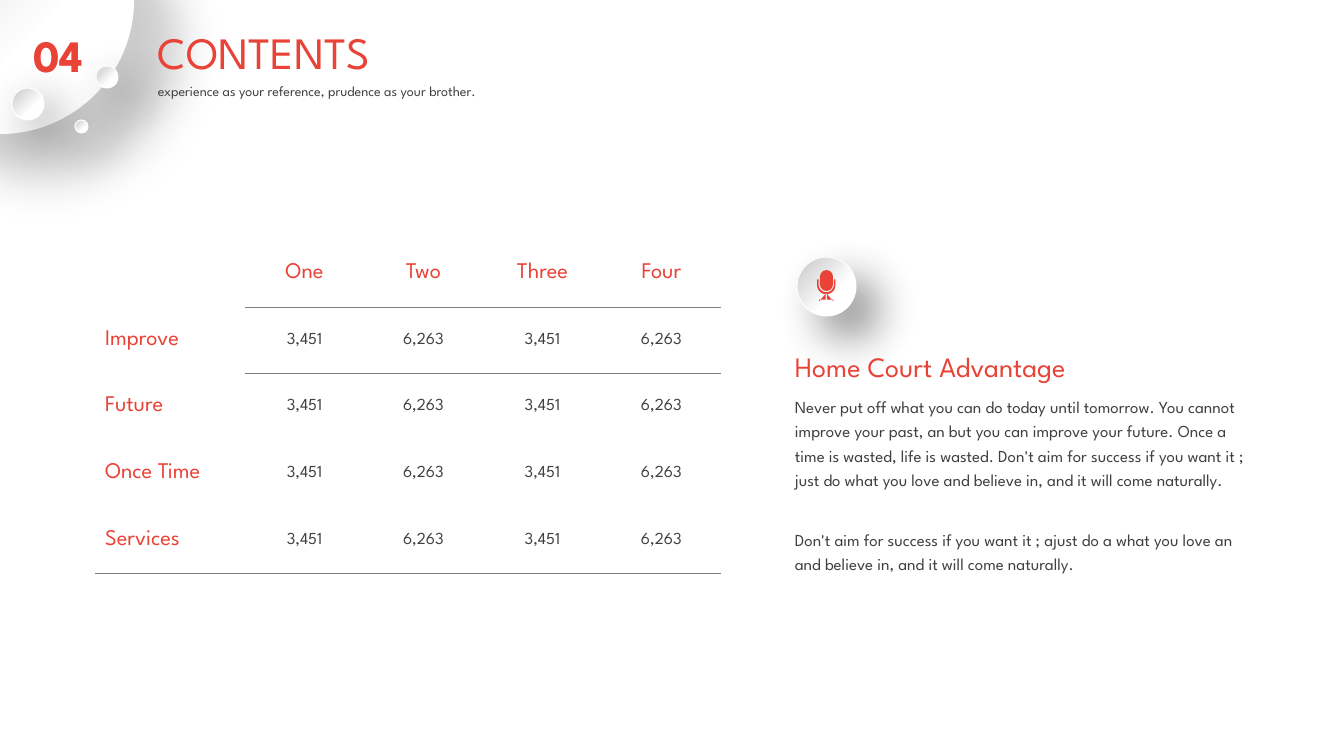
import math
from copy import deepcopy

from lxml import etree
from pptx import Presentation
from pptx.dml.color import RGBColor
from pptx.enum.shapes import MSO_SHAPE
from pptx.enum.text import MSO_ANCHOR, MSO_AUTO_SIZE, PP_ALIGN
from pptx.oxml.ns import qn
from pptx.util import Pt

PX = 9144000 / 1008  # EMU in one px
LEFT, CENTER = PP_ALIGN.LEFT, PP_ALIGN.CENTER
MIDDLE = MSO_ANCHOR.MIDDLE
GROW = MSO_AUTO_SIZE.SHAPE_TO_FIT_TEXT
ELLIPSE, ROUNDED = MSO_SHAPE.OVAL, MSO_SHAPE.ROUNDED_RECTANGLE
NO_STYLE = "{2D5ABB26-0587-4C30-8999-92F81FD0307C}"
RED, DARK, GRAY, WHITE, SILVER, BLACK = (
    "E94236", "404040", "808080", "FFFFFF", "C7C7C7", "000000")


def emu(*lengths):
    return [round(n * PX) for n in lengths]


def rgb(color):
    return RGBColor.from_string(color)


def child(parent, tag, **attrs):
    return etree.SubElement(parent, qn(tag), {k: str(v) for k, v in attrs.items()})


def write(tf, text, size=12, color=DARK, bold=False, align=LEFT, spacing=None):
    p = tf.paragraphs[0]
    p.alignment = align
    if spacing:
        p.line_spacing = spacing
    r = p.add_run()
    r.text = text
    r.font.name = "League Spartan"
    r.font.size = Pt(size)
    r.font.bold = bold
    r.font.color.rgb = rgb(color)


class Deck:
    def __init__(self, width, height):
        self.prs = Presentation()
        self.prs.slide_width, self.prs.slide_height = emu(width, height)
        self.s = self.prs.slides.add_slide(self.prs.slide_layouts[6])

    def text(self, x, y, w, h, text, wrap=True, **fmt):
        tf = self.s.shapes.add_textbox(*emu(x, y, w, h)).text_frame
        tf.word_wrap = wrap
        tf.auto_size = GROW
        write(tf, text, **fmt)

    def solid(self, sp, color):
        sp.fill.solid()
        sp.fill.fore_color.rgb = rgb(color)
        sp.line.fill.background()
        sp.shadow.inherit = False

    def capsule(self, x, y, w, h, color):
        sp = self.s.shapes.add_shape(ROUNDED, *emu(x, y, w, h))
        sp.adjustments[0] = 0.5
        self.solid(sp, color)

    def outline(self, points, color):
        """Closed outline; points are in tenths of a px."""
        builder = self.s.shapes.build_freeform(*points[0], scale=PX / 10)
        builder.add_line_segments(points[1:], close=True)
        self.solid(builder.convert_to_shape(), color)

    def bubble(self, x, y, size, distance, line=0.75, shade=BLACK, alpha=45):
        sp = self.s.shapes.add_shape(ELLIPSE, *emu(x, y, size, size))
        sp.line.color.rgb = rgb(WHITE)
        sp.line.width = Pt(line)
        # White up to 36 %, then silver toward the upper left
        sp.fill.gradient()
        sp.fill.gradient_angle = 135
        first, last = sp.fill.gradient_stops
        first.position, last.position = 0, 1
        first.color.rgb, last.color.rgb = rgb(WHITE), rgb(SILVER)
        stops = sp._element.spPr.find(".//" + qn("a:gsLst"))
        middle = deepcopy(stops[0])
        middle.set("pos", "36000")
        stops.insert(1, middle)
        # Soft shadow toward the lower right
        sp.shadow.inherit = False
        effects = sp._element.spPr.find(qn("a:effectLst"))
        shadow = child(effects, "a:outerShdw", blurRad=Pt(33), dist=Pt(distance),
                       dir=45 * 60000, algn="tl", rotWithShape=0)
        child(child(shadow, "a:srgbClr", val=shade), "a:alpha", val=alpha * 1000)

    def border(self, cell, side):
        ln = etree.Element(qn("a:ln" + side), w=str(Pt(0.75)))
        child(child(ln, "a:solidFill"), "a:srgbClr", val=GRAY)
        cell._tc.get_or_add_tcPr().insert(0, ln)

    def table(self, x, y, widths, heights, rows):
        frame = self.s.shapes.add_table(len(rows), len(widths),
                                        *emu(x, y, sum(widths), sum(heights)))
        table = frame.table
        table.first_row = table.horz_banding = False
        table._tbl.tblPr.find(qn("a:tableStyleId")).text = NO_STYLE
        for column, width in zip(table.columns, emu(*widths)):
            column.width = width
        for row, height in zip(table.rows, emu(*heights)):
            row.height = height
        for i, row in enumerate(rows):
            for j, value in enumerate(row):
                cell = table.cell(i, j)
                cell.vertical_anchor = MIDDLE
                cell.fill.background()
                if value:
                    heading = i == 0 or j == 0
                    write(cell.text_frame, value, size=16 if heading else 12,
                          color=RED if heading else DARK,
                          align=CENTER if j else LEFT)
                if i == len(rows) - 1 or (i == 0 and j):
                    self.border(cell, "B")
                if i == 1 and j:
                    self.border(cell, "T")


def arc(cx, cy, radius, start, stop, steps=24):
    angles = [math.radians(start + (stop - start) * i / steps) for i in range(steps + 1)]
    return [(round(cx + radius * math.cos(a)), round(cy + radius * math.sin(a)))
            for a in angles]


def mic_stand(cx, top):
    """Cradle, stem and foot of the microphone, in tenths of a px."""
    right = [(cx + 7, top + 143), (cx + 7, top + 203), (cx + 70, top + 203),
             (cx + 70, top + 219)]
    left = [(2 * cx - x, y) for x, y in reversed(right)]
    inner = arc(cx, top + 52, 77, 0, 180)
    outer = arc(cx, top + 57, 92, 180, 95) + left + right + arc(cx, top + 57, 92, 85, 0)
    return [(cx + 77, top)] + inner + [(cx - 77, top), (cx - 92, top)] + outer + [(cx + 92, top)]


def main():
    deck = Deck(1344, 756)

    # Corner bubbles
    deck.bubble(-133, -133, 266, 45, line=1.5, shade=GRAY, alpha=40)
    for x, y, size in [(12, 88, 32), (75, 120, 13), (96, 66, 22)]:
        deck.bubble(x, y, size, 15)

    # Heading
    deck.text(22, 23, 73, 64, "04", wrap=False, size=32, color=RED, bold=True, align=CENTER)
    deck.text(148, 20, 293, 64, "CONTENTS", size=32, color=RED)
    deck.text(148, 74, 437, 29, "experience as your reference, prudence as your brother.",
              size=10, spacing=1.2)

    # Table
    values = ["3,451", "6,263"] * 2
    labels = ["Improve", "Future", "Once Time", "Services"]
    rows = [["", "One", "Two", "Three", "Four"]] + [[label] + values for label in labels]
    deck.table(95, 240, [150] + [119] * 4, [67, 66, 67, 67, 66], rows)

    # Microphone badge
    deck.bubble(797, 257, 59, 22)
    deck.capsule(820, 270, 13, 21, RED)
    deck.outline(mic_stand(8263, 2793), RED)

    # Message
    deck.text(785, 345, 356, 44, "Home Court Advantage", wrap=False, size=20, color=RED)
    deck.text(785, 388, 474, 132,
              "Never put off what you can do today until tomorrow. You cannot improve your past, "
              "an but you can improve your future. Once a time is wasted, life is wasted. "
              "Don't aim for success if you want it ; just do what you love and believe in, "
              "and it will come naturally.", spacing=1.2)
    deck.text(785, 521, 474, 59,
              "Don't aim for success if you want it ; ajust do a what you love an and believe in, "
              "and it will come naturally.", spacing=1.2)

    deck.prs.save("out.pptx")


if __name__ == "__main__":
    main()
